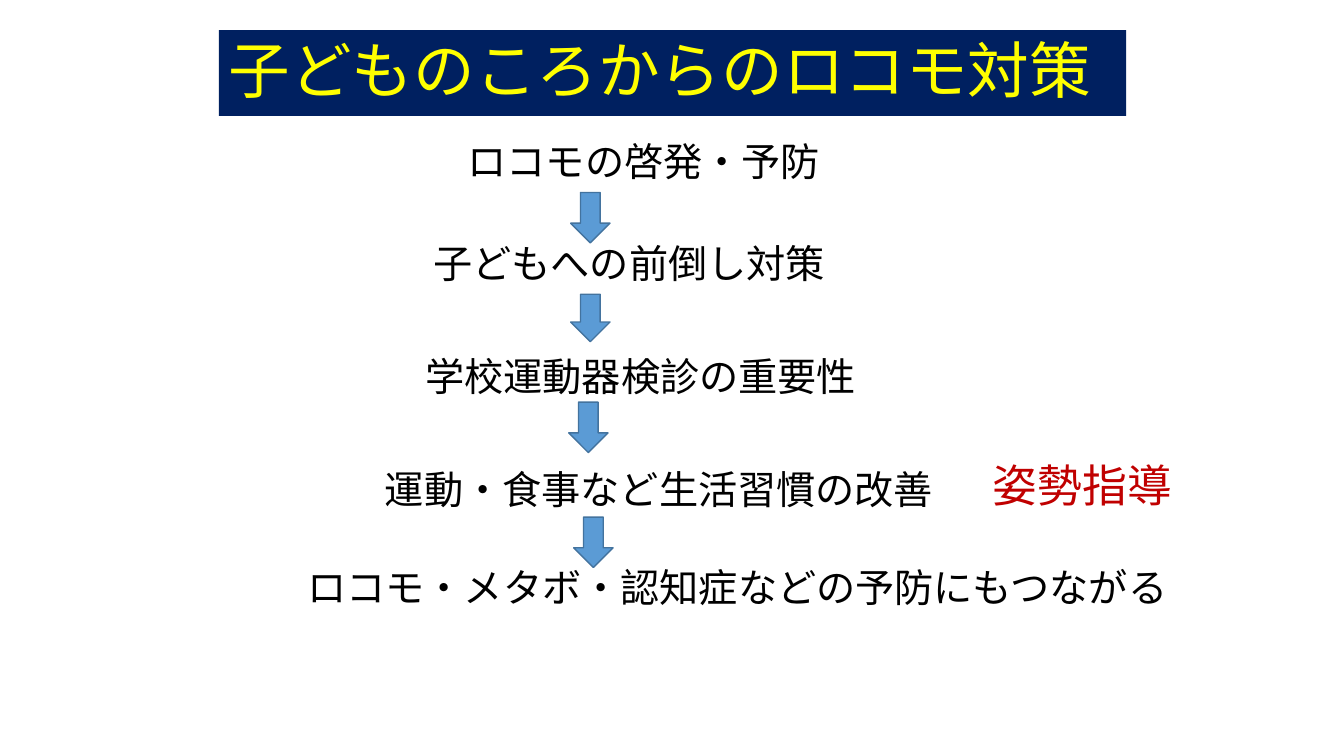
from pptx import Presentation
from pptx.dml.color import RGBColor
from pptx.enum import shapes, text
from pptx.util import Inches, Pt

HUES = {"navy": "002060", "yellow": "FFFF00", "black": "000000",
        "blue": "5B9BD5", "edge": "43739E", "red": "C00000"}


def hue(name):
    return RGBColor.from_string(HUES[name])


def write(shape, words, size, color, wrap=True):
    frame = shape.text_frame
    frame.word_wrap = wrap
    frame.vertical_anchor = text.MSO_ANCHOR.MIDDLE
    para = frame.paragraphs[0]
    para.text = words
    para.alignment = text.PP_ALIGN.LEFT
    look = {"name": "Calibri", "size": Pt(size)}
    for key, value in look.items():
        setattr(para.font, key, value)
    para.font.color.rgb = hue(color)
    return para


deck = Presentation()
deck.slide_width, deck.slide_height = Inches(13.33), Inches(7.5)
slide = deck.slides.add_slide(deck.slide_layouts[6])
items = slide.shapes

# Title band
band = items.add_shape(shapes.MSO_SHAPE.RECTANGLE, Inches(2.17), Inches(0.3),
                       Inches(9), Inches(0.85))
band.shadow.inherit = False
band.fill.solid()
band.fill.fore_color.rgb = hue("navy")
band.line.fill.background()
write(band, "子どものころからのロコモ対策", 44, "yellow").line_spacing = 0.9

# Steps: left edge of the words, middle height, words
steps = [
    (4.64, 1.6, "ロコモの啓発・予防"),
    (4.3, 2.61, "子どもへの前倒し対策"),
    (4.22, 3.73, "学校運動器検診の重要性"),
    (3.82, 4.85, "運動・食事など生活習慣の改善"),
    (3.05, 5.82, "ロコモ・メタボ・認知症などの予防にもつながる"),
]
high = 0.6
for left, mid, words in steps:
    box = items.add_textbox(Inches(left - 0.1), Inches(mid - high / 2),
                            Inches(len(words) * 0.39 + 0.3), Inches(high))
    write(box, words, 28, "black")

# Arrows between steps: left, top, height
for left, top, tall in [(5.66, 1.91, 0.5), (5.66, 2.92, 0.47),
                        (5.64, 3.99, 0.5), (5.69, 5.13, 0.5)]:
    arrow = items.add_shape(shapes.MSO_SHAPE.DOWN_ARROW, Inches(left),
                            Inches(top), Inches(0.39), Inches(tall))
    arrow.shadow.inherit = False
    arrow.fill.solid()
    arrow.fill.fore_color.rgb = hue("blue")
    arrow.line.color.rgb = hue("edge")
    arrow.line.width = Pt(1)

# Side note
note = items.add_textbox(Inches(9.75), Inches(4.49), Inches(2), Inches(0.64))
write(note, "姿勢指導", 32, "red", wrap=False)

deck.save("out.pptx")
